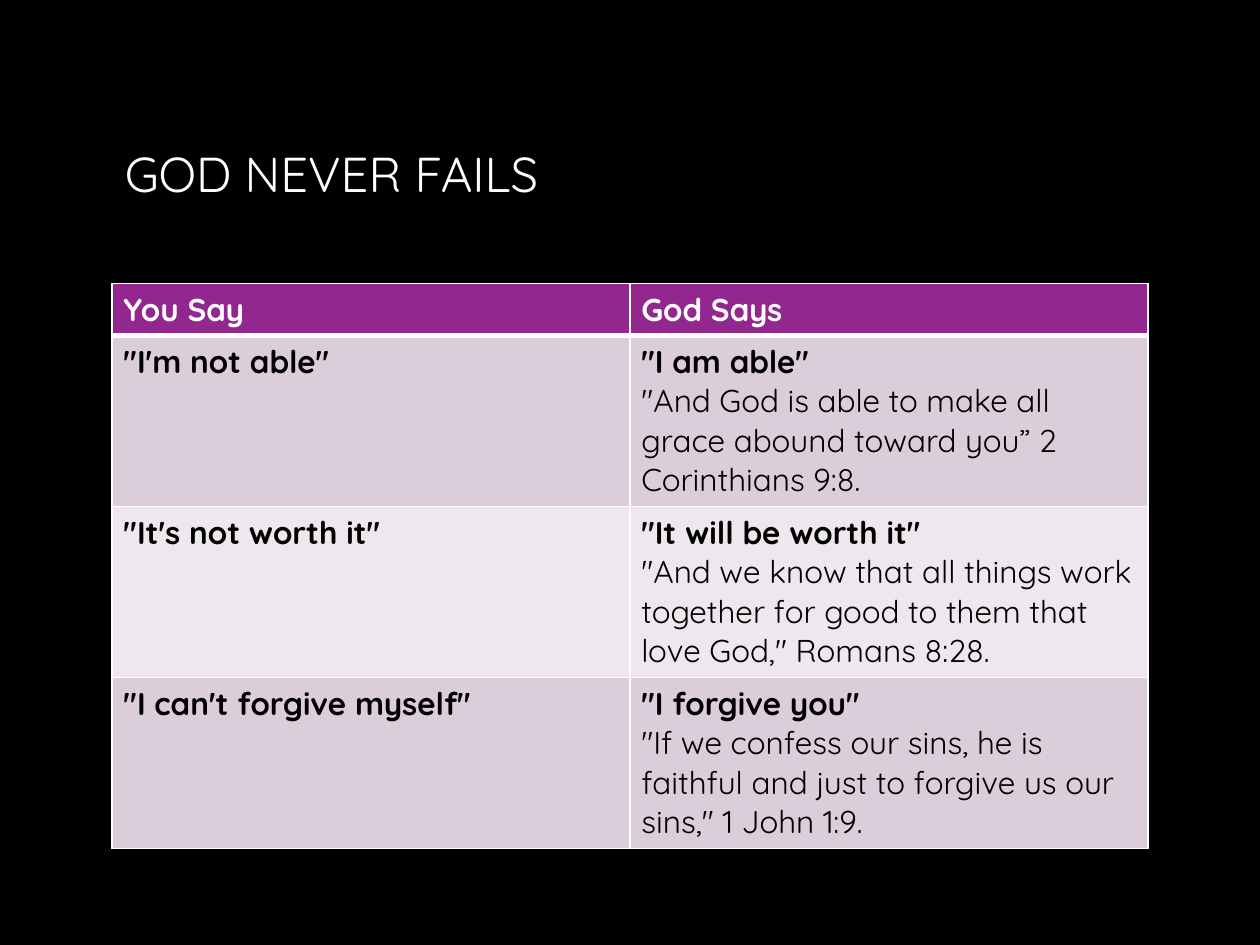
from pptx import Presentation
from pptx.dml.color import RGBColor
from pptx.enum.text import MSO_ANCHOR, PP_ALIGN
from pptx.oxml import parse_xml
from pptx.oxml.ns import nsdecls
from pptx.util import Inches, Pt

BLACK = RGBColor(0x00, 0x00, 0x00)
WHITE = RGBColor(0xFF, 0xFF, 0xFF)
PURPLE = RGBColor(0x92, 0x27, 0x8F)
LILAC = RGBColor(0xDC, 0xCD, 0xDB)
PALE_LILAC = RGBColor(0xEE, 0xE8, 0xEE)
FONT = "Quicksand"

HEADINGS = ("You Say", "God Says")
PROMISES = [
    ('"I\'m not able"', '"I am able"',
     '"And God is able to make all grace abound toward you” 2 Corinthians 9:8.'),
    ('"It\'s not worth it"', '"It will be worth it"',
     '"And we know that all things work together for good to them that love God," Romans 8:28.'),
    ('"I can\'t forgive myself"', '"I forgive you"',
     '"If we confess our sins, he is faithful and just to forgive us our sins," 1 John 1:9.'),
]


def add_run(paragraph, text, size, color, bold=False):
    """Add one formatted run to a paragraph."""
    run = paragraph.add_run()
    run.text = text
    run.font.name = FONT
    run.font.size = Pt(size)
    run.font.bold = bold
    run.font.color.rgb = color


def set_borders(cell, top=1, bottom=1):
    """Draw white borders, with widths in points, around a cell."""
    properties = cell._tc.get_or_add_tcPr()
    widths = (("lnL", 1), ("lnR", 1), ("lnT", top), ("lnB", bottom))
    for position, (side, width) in enumerate(widths):
        properties.insert(position, parse_xml(
            f'<a:{side} {nsdecls("a")} w="{Pt(width)}"><a:solidFill>'
            f'<a:srgbClr val="{WHITE}"/></a:solidFill></a:{side}>'))


def fill_cell(cell, fill, color, statement, verse=None):
    """Fill a cell with a bold statement and an optional verse below it."""
    cell.fill.solid()
    cell.fill.fore_color.rgb = fill
    cell.margin_left = cell.margin_right = Inches(0.09)
    cell.margin_top = cell.margin_bottom = Inches(0.05)
    paragraph = cell.text_frame.paragraphs[0]
    add_run(paragraph, statement, 18, color, bold=True)
    if verse:
        paragraph.add_line_break()
        add_run(paragraph, verse, 18, color)


def place_title(slide, left, top, width, height):
    """Place and format the slide title in the given box."""
    title = slide.shapes.title
    title.left, title.top, title.width, title.height = left, top, width, height
    frame = title.text_frame
    frame.vertical_anchor = MSO_ANCHOR.MIDDLE
    paragraph = frame.paragraphs[0]
    paragraph.alignment = PP_ALIGN.LEFT
    add_run(paragraph, "GOD NEVER FAILS", 28, WHITE)


def place_promises(slide, left, top, width, height):
    """Place the table of sayings and promises in the given box."""
    table = slide.shapes.add_table(
        len(PROMISES) + 1, len(HEADINGS), left, top, width, height).table
    heading_height = Inches(0.41)
    table.rows[0].height = heading_height
    for column, heading in enumerate(HEADINGS):
        cell = table.cell(0, column)
        fill_cell(cell, PURPLE, WHITE, heading)
        set_borders(cell, bottom=3)
    for row, (saying, answer, verse) in enumerate(PROMISES, start=1):
        table.rows[row].height = (height - heading_height) // len(PROMISES)
        fill = LILAC if row % 2 else PALE_LILAC
        fill_cell(table.cell(row, 0), fill, BLACK, saying)
        fill_cell(table.cell(row, 1), fill, BLACK, answer, verse)
        for column in range(len(HEADINGS)):
            set_borders(table.cell(row, column), top=3 if row == 1 else 1)


def main():
    """Build and save the slide."""
    presentation = Presentation()
    presentation.slide_width = Inches(10)
    presentation.slide_height = Inches(7.5)
    slide = presentation.slides.add_slide(presentation.slide_layouts[5])
    slide.background.fill.solid()
    slide.background.fill.fore_color.rgb = BLACK
    place_title(slide, Inches(0.89), Inches(0.65), Inches(8.21), Inches(1.44))
    place_promises(slide, Inches(0.89), Inches(2.25), Inches(8.22), Inches(4.48))
    presentation.save("out.pptx")


if __name__ == "__main__":
    main()
